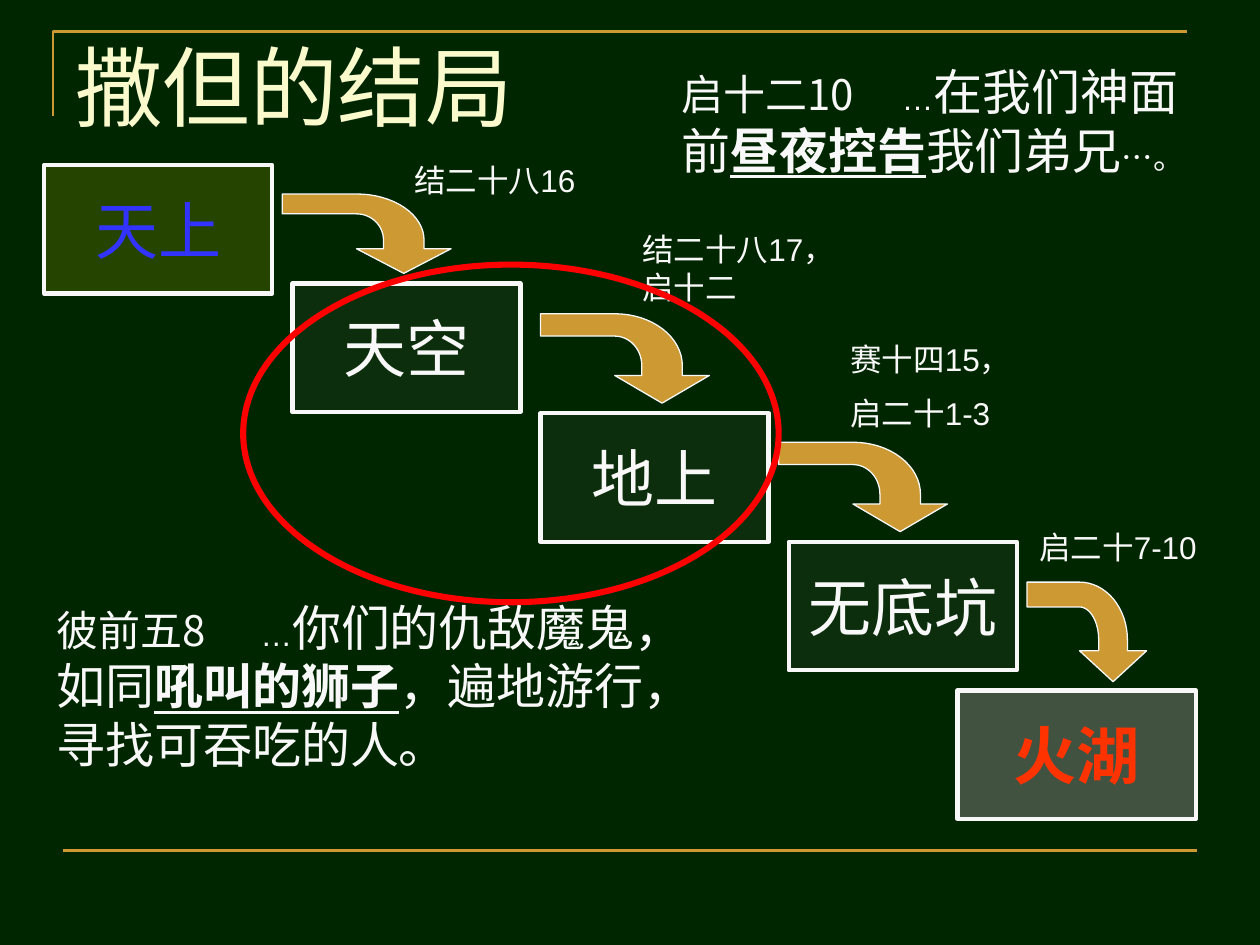
from dataclasses import dataclass
from math import cos, pi, sin

from lxml.etree import SubElement
from pptx import Presentation
from pptx.dml.color import RGBColor
from pptx.enum.shapes import MSO_CONNECTOR, MSO_SHAPE
from pptx.enum.text import MSO_ANCHOR, MSO_AUTO_SIZE, PP_ALIGN
from pptx.oxml.ns import qn
from pptx.util import Inches, Pt

WHITE = "F8F8F8"
GOLD = "CC9933"
RED = "FF0000"
SANS = "Arial"
CHINESE = "Noto Sans CJK SC"


@dataclass(frozen=True)
class Run:
    text: str
    size: float = 18
    font: str = SANS
    color: str = WHITE
    strong: bool = False
    underline: bool = False


@dataclass(frozen=True)
class Stage:
    name: str
    left: float
    top: float
    width: float = 1.81
    fill: str = "5F5F5F"
    opacity: int = 14
    color: str = WHITE
    bold: bool = False


@dataclass(frozen=True)
class Arrow:
    left: float
    top: float
    width: float
    height: float


@dataclass(frozen=True)
class Note:
    left: float
    top: float
    width: float
    height: float
    paragraphs: tuple[tuple[Run, ...], ...]
    tab: float = 0


def verse(text: str, emphasized: bool = False) -> Run:
    return Run(text, 28, CHINESE, strong=emphasized, underline=emphasized)


STAGES = (
    Stage("天上", 0.35, 1.31, fill="FFFF00", color="3333FF"),
    Stage("天空", 2.32, 2.25),
    Stage("地上", 4.29, 3.28),
    Stage("无底坑", 6.26, 4.3),
    Stage("火湖", 7.6, 5.48, 1.89, "777777", 55, "FF3300", True),
)
ARROWS = (
    Arrow(2.24, 1.54, 1.34, 0.63),
    Arrow(4.29, 2.49, 1.34, 0.71),
    Arrow(6.18, 3.51, 1.34, 0.71),
    Arrow(8.15, 4.62, 0.95, 0.79),
)
TITLE = Note(0.5, 0.21, 9, 1.34, ((Run("撒但的结局", 50, "Times New Roman", "FAFACC"),),))
REFERENCES = (
    Note(3.19, 1.23, 1.89, 0.4, ((Run("结二十八16"),),)),
    Note(5, 1.78, 1.73, 0.7, ((Run("结二十八17，启十二"),),)),
    Note(6.65, 2.65, 1.73, 0.85, ((Run("赛十四15，"),), (Run("启二十1-3"),))),
    Note(8.15, 4.14, 1.54, 0.4, ((Run("启二十7-10"),),)),
)
VERSES = (
    Note(5.31, 0.44, 4.25, 1.03, ((
        Run("启十二10", 24, CHINESE), Run("\t…"), verse("在我们神面前"),
        verse("昼夜控告", True), verse("我们弟兄"), Run("…。"),
    ),), 1.75),
    Note(0.35, 4.69, 5.28, 1.5, ((
        Run("彼前五8", 24, CHINESE), Run("\t…"), verse("你们的仇敌魔鬼，如同"),
        verse("吼叫的狮子", True), verse("，遍地游行，寻找可吞吃的人。"),
    ),), 1.62),
)


def rgb(value: str) -> RGBColor:
    return RGBColor.from_string(value)


def style_shape(shape, line: str, width: float, fill: str = "", opacity: int = 100) -> None:
    shape.shadow.inherit = False
    shape.line.color.rgb = rgb(line)
    shape.line.width = Pt(width)
    if not fill:
        shape.fill.background()
        return
    shape.fill.solid()
    shape.fill.fore_color.rgb = rgb(fill)
    if opacity < 100:
        color = shape.fill._xPr.find(qn("a:solidFill"))[0]
        SubElement(color, qn("a:alpha"), val=str(opacity * 1000))


def add_run(paragraph, content: Run) -> None:
    run = paragraph.add_run()
    run.text = content.text
    run.font.size = Pt(content.size)
    run.font.name = content.font
    run.font.bold = content.strong
    run.font.underline = content.underline
    run.font.color.rgb = rgb(content.color)


def add_note(slide, note: Note) -> None:
    box = slide.shapes.add_textbox(
        Inches(note.left), Inches(note.top), Inches(note.width), Inches(note.height))
    frame = box.text_frame
    frame.word_wrap = True
    frame.auto_size = MSO_AUTO_SIZE.NONE
    for index, runs in enumerate(note.paragraphs):
        paragraph = frame.add_paragraph() if index else frame.paragraphs[0]
        if note.tab:
            tabs = SubElement(paragraph._p.get_or_add_pPr(), qn("a:tabLst"))
            SubElement(tabs, qn("a:tab"), pos=str(Inches(note.tab)), algn="l")
        if index:
            paragraph.space_before = Pt(9)
        for run in runs:
            add_run(paragraph, run)


def add_stage(slide, stage: Stage) -> None:
    shape = slide.shapes.add_shape(
        MSO_SHAPE.RECTANGLE, Inches(stage.left), Inches(stage.top),
        Inches(stage.width), Inches(1.02))
    style_shape(shape, WHITE, 2.5, stage.fill, stage.opacity)
    frame = shape.text_frame
    frame.word_wrap = False
    frame.vertical_anchor = MSO_ANCHOR.MIDDLE
    paragraph = frame.paragraphs[0]
    paragraph.alignment = PP_ALIGN.CENTER
    add_run(paragraph, Run(stage.name, 36, color=stage.color, strong=stage.bold))


def bend(radius_x: float, radius_y: float, steps: int = 16) -> list[tuple[float, float]]:
    angles = [pi / 2 * step / steps for step in range(steps + 1)]
    return [(0.44 + radius_x * cos(angle), 0.58 - radius_y * sin(angle)) for angle in angles]


def add_outline(slide, points: list[tuple[float, float]], close: bool):
    corners = [(Inches(x), Inches(y)) for x, y in points]
    builder = slide.shapes.build_freeform(*corners[0])
    builder.add_line_segments(corners[1:], close=close)
    return builder.convert_to_shape()


def add_arrow(slide, arrow: Arrow) -> None:
    outline = [(0.72, 1), (1, 0.69), (0.84, 0.69), *bend(0.4, 0.58), (0, 0), (0, 0.25),
               *reversed(bend(0.16, 0.33)), (0.6, 0.69), (0.44, 0.69)]
    points = [(arrow.left + x * arrow.width, arrow.top + y * arrow.height) for x, y in outline]
    style_shape(add_outline(slide, points, True), WHITE, 0.75, GOLD)


def add_frame(slide) -> None:
    corner = add_outline(slide, [(0.42, 0.92), (0.42, 0.25), (9.42, 0.25)], False)
    style_shape(corner, GOLD, 1.5)
    rule = slide.shapes.add_connector(
        MSO_CONNECTOR.STRAIGHT, Inches(0.5), Inches(6.75), Inches(9.5), Inches(6.75))
    rule.line.color.rgb = rgb(GOLD)
    rule.line.width = Pt(1.5)
    SubElement(rule._element.spPr, qn("a:effectLst"))


def main() -> None:
    presentation = Presentation()
    presentation.slide_width = Inches(10)
    presentation.slide_height = Inches(7.5)
    slide = presentation.slides.add_slide(presentation.slide_layouts[6])
    slide.background.fill.solid()
    slide.background.fill.fore_color.rgb = rgb("002600")
    add_frame(slide)
    add_note(slide, TITLE)
    for stage in STAGES:
        add_stage(slide, stage)
    for arrow in ARROWS:
        add_arrow(slide, arrow)
    for reference in REFERENCES:
        add_note(slide, reference)
    ellipse = slide.shapes.add_shape(
        MSO_SHAPE.OVAL, Inches(1.93), Inches(2.1), Inches(4.25), Inches(2.68))
    style_shape(ellipse, RED, 3.5)
    for passage in VERSES:
        add_note(slide, passage)
    presentation.save("out.pptx")


if __name__ == "__main__":
    main()
